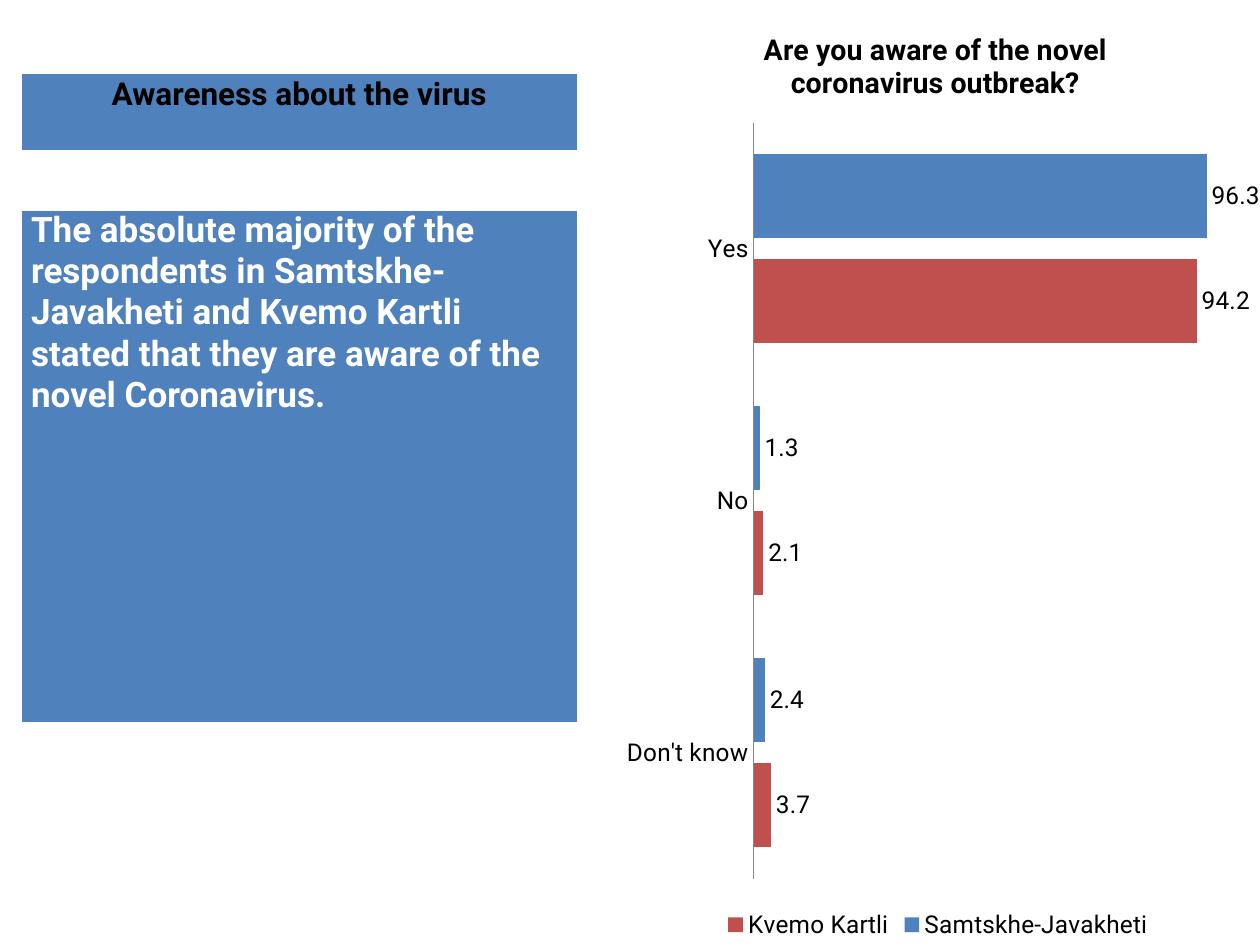
from lxml.etree import SubElement
from pptx import Presentation
from pptx.chart.data import CategoryChartData
from pptx.dml.color import RGBColor
from pptx.enum.chart import XL_CHART_TYPE, XL_LABEL_POSITION, XL_LEGEND_POSITION, XL_TICK_MARK
from pptx.enum.text import PP_ALIGN
from pptx.oxml import parse_xml
from pptx.oxml.ns import nsdecls, qn
from pptx.util import Inches, Pt

BLUE = RGBColor(0x4F, 0x81, 0xBD)
RED = RGBColor(0xC0, 0x50, 0x4D)
WHITE = RGBColor(0xFF, 0xFF, 0xFF)
BLACK = RGBColor(0, 0, 0)
GREY = RGBColor(0x86, 0x86, 0x86)

COLUMNS, ROWS = 120, 90
BORDERS = {"a:lnL": 1, "a:lnR": 1, "a:lnT": 1, "a:lnB": 3}
ANSWERS = ("Yes", "No", "Don't know")
REGIONS = (
    ("Samtskhe-Javakheti", (96.3, 1.3, 2.4), BLUE),
    ("Kvemo Kartli", (94.2, 2.1, 3.7), RED),
)
NUMBER_FORMAT = "###0.0"


class SurveySlide:
    font_name = "Roboto"

    def __init__(self, deck):
        self.slide = deck.slides.add_slide(deck.slide_layouts[6])
        self.column = deck.slide_width / COLUMNS
        self.row = deck.slide_height / ROWS

    def place(self, left, top, width, height):
        """Turn grid columns and rows into slide lengths."""
        return (int(left * self.column), int(top * self.row),
                int(width * self.column), int(height * self.row))

    def style(self, font, size, color=BLACK, bold=False):
        font.name, font.size, font.bold = self.font_name, Pt(size), bold
        font.color.rgb = color

    def panel(self, area, text, size, color, align=PP_ALIGN.LEFT, spacing=1.0):
        """Add a one-cell table with a filled background."""
        cell = self.slide.shapes.add_table(1, 1, *self.place(*area)).table.cell(0, 0)
        cell.margin_left = cell.margin_right = Inches(0.08)
        cell.margin_top = cell.margin_bottom = 0
        paragraph = cell.text_frame.paragraphs[0]
        paragraph.alignment, paragraph.line_spacing = align, spacing
        run = paragraph.add_run()
        run.text = text
        self.style(run.font, size, color, bold=True)
        properties = cell._tc.get_or_add_tcPr()
        for side, points in BORDERS.items():
            line = SubElement(properties, qn(side), w=str(Pt(points)))
            fill = SubElement(line, qn("a:solidFill"))
            SubElement(fill, qn("a:srgbClr"), val=str(WHITE))
        cell.fill.solid()
        cell.fill.fore_color.rgb = BLUE

    def bar_chart(self, area, title_lines, title_shares, plot_shares):
        data = CategoryChartData(number_format=NUMBER_FORMAT)
        data.categories = ANSWERS
        for region, shares, _ in REGIONS:
            data.add_series(region, shares)
        chart = self.slide.shapes.add_chart(
            XL_CHART_TYPE.BAR_CLUSTERED, *self.place(*area), data).chart
        self.style(chart.font, 14)
        self.chart_heading(chart, title_lines)

        chart.has_legend = True
        chart.legend.position = XL_LEGEND_POSITION.BOTTOM
        chart.legend.include_in_layout = False

        answers = chart.category_axis
        answers.reverse_order = True
        answers.major_tick_mark = XL_TICK_MARK.NONE
        answers.format.line.color.rgb = GREY
        answers.format.line.width = Pt(0.5)
        percent = chart.value_axis
        percent.minimum_scale, percent.maximum_scale = 0, 100
        percent.has_major_gridlines = False
        percent.visible = False

        plot = chart.plots[0]
        plot.gap_width, plot.overlap, plot.vary_by_categories = 75, -25, False
        for series, (_, _, color) in zip(plot.series, REGIONS):
            series.format.fill.solid()
            series.format.fill.fore_color.rgb = color
            labels = series.data_labels
            labels.show_value = True
            labels.number_format, labels.number_format_is_linked = NUMBER_FORMAT, False
            labels.position = XL_LABEL_POSITION.OUTSIDE_END
            self.style(labels.font, 14)

        chart_parts = chart._chartSpace.chart
        self.pin(chart_parts.find(qn("c:title")), title_shares, after=qn("c:tx"))
        self.pin(chart_parts.plotArea, plot_shares)

    def chart_heading(self, chart, lines):
        frame = chart.chart_title.text_frame
        for number, text in enumerate(lines):
            paragraph = frame.add_paragraph() if number else frame.paragraphs[0]
            paragraph.alignment = PP_ALIGN.CENTER
            run = paragraph.add_run()
            run.text = text
            self.style(run.font, 16.4, bold=True)
        chart.chart_title.include_in_layout = False

    def pin(self, part, shares, after=None):
        """Fix a chart part at x, y (and w, h) shares of the chart."""
        for automatic in part.findall(qn("c:layout")):
            part.remove(automatic)
        target = '<c:layoutTarget val="inner"/>' if len(shares) == 4 else ""
        sizes = "".join(f'<c:{key} val="{share}"/>' for key, share in zip("xywh", shares))
        layout = parse_xml(
            f'<c:layout {nsdecls("c")}><c:manualLayout>{target}'
            f'<c:xMode val="edge"/><c:yMode val="edge"/>{sizes}'
            '</c:manualLayout></c:layout>')
        if after:
            part.find(after).addnext(layout)
        else:
            part.insert(0, layout)


def main():
    deck = Presentation()
    deck.slide_width, deck.slide_height = Inches(10), Inches(7.5)
    survey = SurveySlide(deck)
    survey.panel(
        (2, 20, 53, 49),
        "The absolute majority of the respondents in Samtskhe-Javakheti and "
        "Kvemo Kartli stated that they are aware of the novel Coronavirus.",
        20, WHITE)
    survey.panel((2, 7, 53, 7.5), "Awareness about the virus", 18, BLACK,
                 PP_ALIGN.CENTER, spacing=1.07)
    survey.bar_chart((59.05, 0, 60.95, 90),
                     ("Are you aware of the novel", "coronavirus outbreak?"),
                     (0.22, 0.03), (0.21, 0.13, 0.74, 0.8))
    deck.save("out.pptx")


if __name__ == "__main__":
    main()
